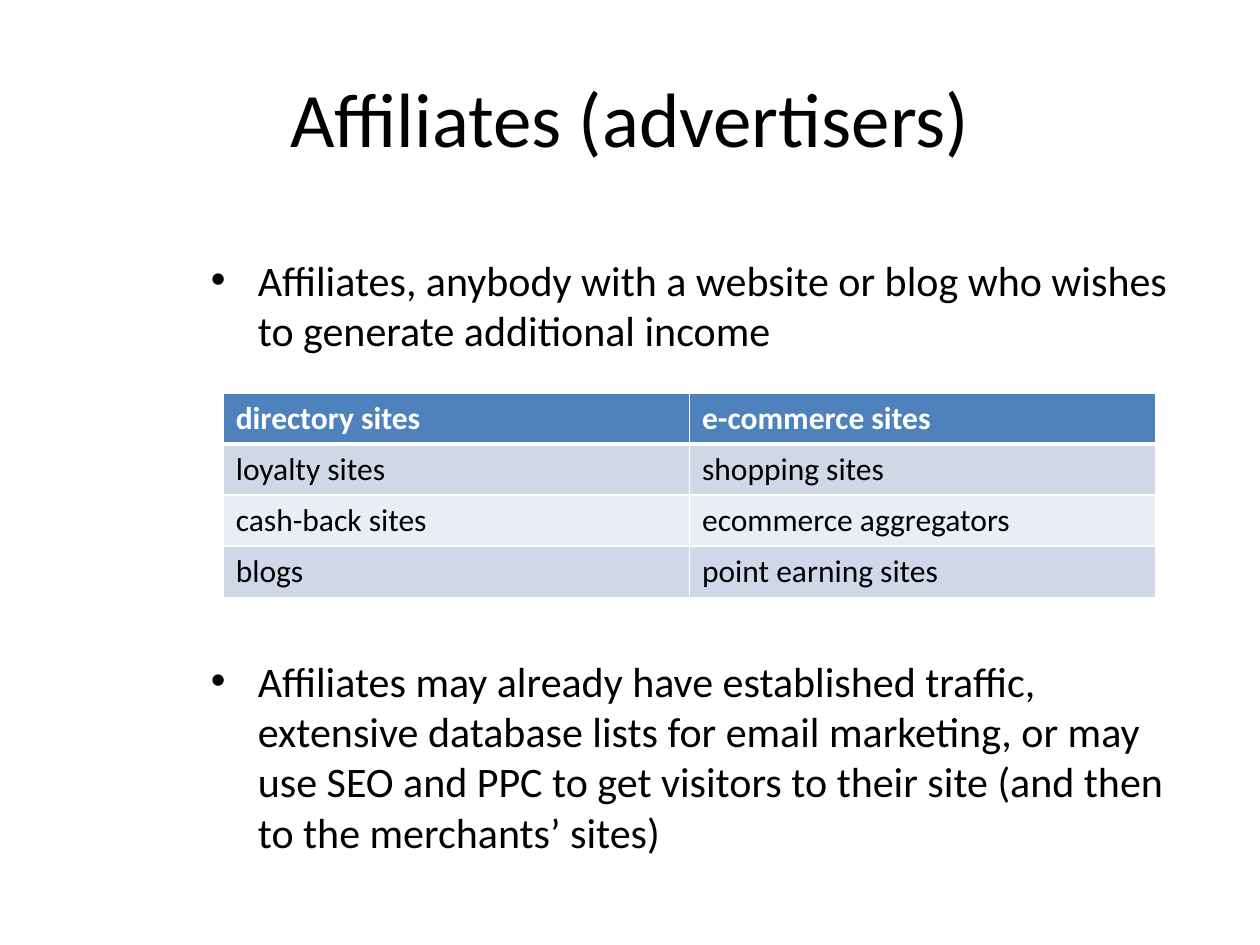
from lxml.etree import SubElement
from pptx import Presentation
from pptx.dml.color import RGBColor
from pptx.enum.text import MSO_ANCHOR as Anchor, PP_ALIGN as Align
from pptx.oxml.ns import qn
from pptx.util import Cm, Pt

FONT = "Calibri"
BLACK, WHITE, HEADER = "000000", "FFFFFF", "4F81BD"
BANDS = ("D0D8E8", "E9EDF4")

TITLE = "Affiliates (advertisers)"
POINTS = [
    "Affiliates, anybody with a website or blog who wishes to generate additional income",
    "Affiliates may already have established traffic, extensive database lists for email "
    "marketing, or may use SEO and PPC to get visitors to their site (and then to the "
    "merchants’ sites)",
]
SITES = [
    ("directory sites", "e-commerce sites"),
    ("loyalty sites", "shopping sites"),
    ("cash-back sites", "ecommerce aggregators"),
    ("blogs", "point earning sites"),
]


def color(value):
    return RGBColor.from_string(value)


def set_font(para, size, value=BLACK, bold=False):
    font = para.font
    font.name, font.size, font.bold = FONT, Pt(size), bold
    font.color.rgb = color(value)


def add_text_frame(page, left, top, width, height):
    box = page.shapes.add_textbox(Cm(left), Cm(top), Cm(width), Cm(height))
    box.text_frame.word_wrap = True
    return box.text_frame


def add_title(page, left, top, width, height):
    frame = add_text_frame(page, left, top, width, height)
    frame.vertical_anchor = Anchor.MIDDLE
    para = frame.paragraphs[0]
    para.text = TITLE
    para.alignment = Align.CENTER
    set_font(para, 44)


def add_bullet(para, indent):
    props = para._p.get_or_add_pPr()
    props.set("marL", str(Cm(indent)))
    props.set("indent", str(-Cm(indent)))
    SubElement(props, qn("a:buFont"), typeface="Arial")
    SubElement(props, qn("a:buChar"), char="•")


def add_points(page, left, top, width, height, gap):
    """Bulleted points, with a gap in points between them for the table."""
    frame = add_text_frame(page, left, top, width, height)
    for index, point in enumerate(POINTS):
        para = frame.add_paragraph() if index else frame.paragraphs[0]
        para.text = point
        add_bullet(para, 0.95)
        if index:
            para.space_before = Pt(gap)
        set_font(para, 24)


def set_borders(cell, top, bottom):
    props = cell._tc.get_or_add_tcPr()
    for side, width in (("L", 1), ("R", 1), ("T", top), ("B", bottom)):
        line = SubElement(props, qn(f"a:ln{side}"), w=str(Pt(width)))
        fill = SubElement(line, qn("a:solidFill"))
        SubElement(fill, qn("a:srgbClr"), val=WHITE)


def add_site_table(page, left, top, width, height):
    table = page.shapes.add_table(
        len(SITES), len(SITES[0]), Cm(left), Cm(top), Cm(width), Cm(height)
    ).table
    for row, names in enumerate(SITES):
        is_header = row == 0
        for column, name in enumerate(names):
            cell = table.cell(row, column)
            set_borders(cell, top=3 if row == 1 else 1, bottom=3 if is_header else 1)
            cell.fill.solid()
            cell.fill.fore_color.rgb = color(HEADER if is_header else BANDS[(row - 1) % 2])
            cell.text = name
            set_font(cell.text_frame.paragraphs[0], 18, WHITE if is_header else BLACK, is_header)


def main():
    deck = Presentation()
    deck.slide_width, deck.slide_height = Cm(25.4), Cm(19.05)
    page = deck.slides.add_slide(deck.slide_layouts[6])
    add_points(page, 4, 5, 20.1, 12.57, gap=171.5)
    add_title(page, 1.27, 0.76, 22.86, 3.18)
    add_site_table(page, 4.5, 7.92, 18.8, 4.12)
    deck.save("out.pptx")


if __name__ == "__main__":
    main()
